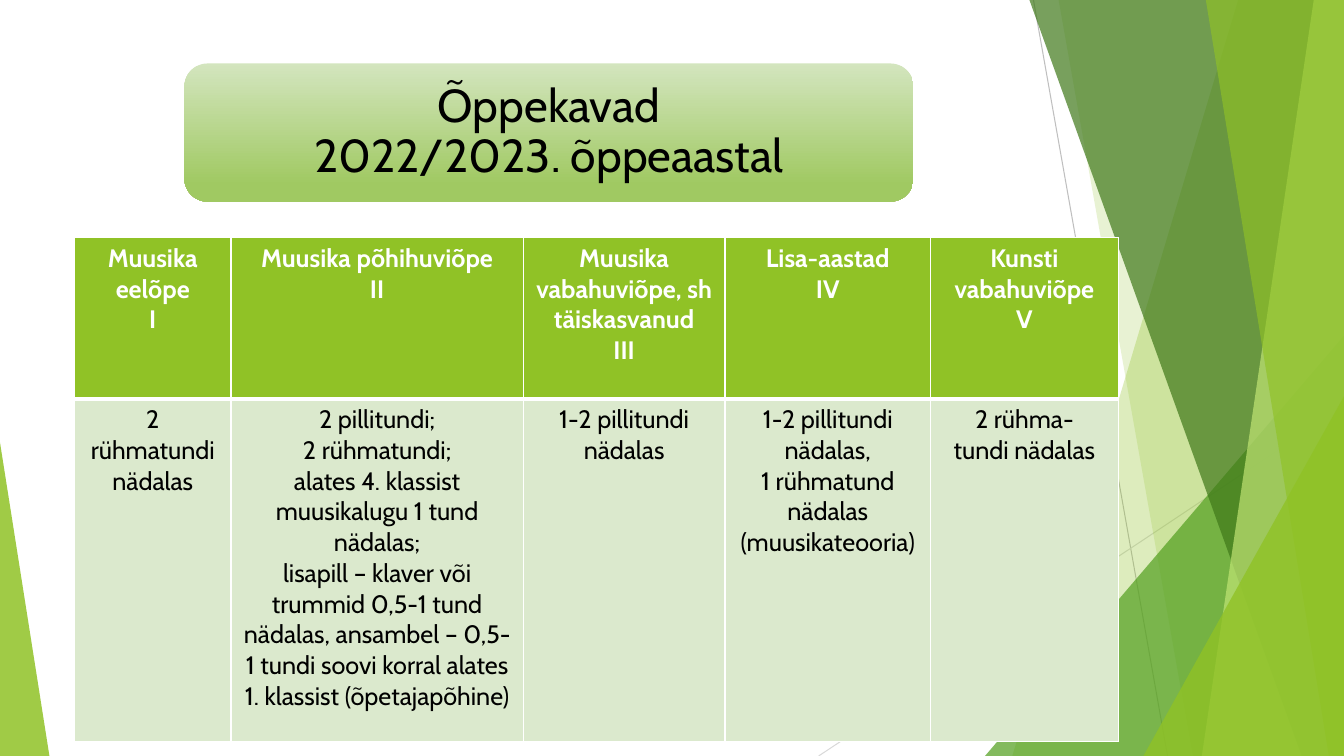
from lxml import etree
from pptx import Presentation
from pptx.dml.color import RGBColor
from pptx.enum.shapes import MSO_CONNECTOR, MSO_SHAPE
from pptx.enum.text import MSO_ANCHOR, PP_ALIGN
from pptx.oxml import parse_xml
from pptx.oxml.ns import qn
from pptx.util import Inches, Pt

STRAIGHT = MSO_CONNECTOR.STRAIGHT
TRIANGLE = MSO_SHAPE.ISOSCELES_TRIANGLE
ROUNDED = MSO_SHAPE.ROUNDED_RECTANGLE
CENTER = PP_ALIGN.CENTER
MIDDLE = MSO_ANCHOR.MIDDLE
NS = "http://schemas.openxmlformats.org/drawingml/2006/main"

FONT = "Cabin"
WHITE = RGBColor(0xFF, 0xFF, 0xFF)
BLACK = RGBColor(0, 0, 0)
GREEN = RGBColor(0x90, 0xC2, 0x26)
MID_GREEN = RGBColor(0x54, 0xA0, 0x21)
DARK_GREEN = RGBColor(0x3F, 0x78, 0x19)
LIME = RGBColor(0xC0, 0xE4, 0x74)
PALE_GREEN = RGBColor(0xDB, 0xE9, 0xCD)
TITLE_TOP = RGBColor(0xD3, 0xE5, 0xBE)
TITLE_BOTTOM = RGBColor(0xA0, 0xC9, 0x62)
GRAY = RGBColor(0xBF, 0xBF, 0xBF)
LIGHT_GRAY = RGBColor(0xD9, 0xD9, 0xD9)

WIDTH, HEIGHT = 13.33, 7.5

# Ends of each thin line, then its colour
LINES = [
    ((10.25, 0), (11.58, HEIGHT), GRAY),
    ((WIDTH, 4.03), (8.12, HEIGHT), LIGHT_GRAY),
]
# Bands reach the right edge: top left x, bottom left x, colour, opacity
BACK_BANDS = [(12.28, 10.04, GREEN, 30), (10.5, 11.83, GREEN, 20)]
FRONT_BANDS = [
    (10.21, 12.91, DARK_GREEN, 70),
    (13.03, 11.92, LIME, 70),
    (11.96, 13.18, GREEN, 65),
]

COLUMN_WIDTHS = [1.55, 2.9, 2, 2.04, 1.86]
ROW_HEIGHTS = [1.6, 3.4]
HEADERS = [
    ["Muusika", "eelõpe", "I"],
    ["Muusika põhihuviõpe", "II"],
    ["Muusika vabahuviõpe, sh täiskasvanud", "III"],
    ["Lisa-aastad", "IV"],
    ["Kunsti vabahuviõpe", "V"],
]
LESSONS = [
    ["2 rühmatundi nädalas"],
    [
        "2 pillitundi;",
        "2 rühmatundi;",
        "alates 4. klassist muusikalugu 1 tund nädalas;",
        "lisapill – klaver või trummid 0,5-1 tund nädalas, ansambel – 0,5-1 tundi "
        "soovi korral alates 1. klassist (õpetajapõhine)",
    ],
    ["1-2 pillitundi nädalas"],
    ["1-2 pillitundi nädalas,", "1 rühmatund nädalas", "(muusikateooria)"],
    ["2 rühma-", "tundi nädalas"],
]


def write(tf, paragraphs, size=18, color=BLACK, bold=False, spacing=None):
    for i, text in enumerate(paragraphs):
        p = tf.paragraphs[0] if i == 0 else tf.add_paragraph()
        p.text = text
        p.alignment = CENTER
        p.line_spacing = spacing
        for r in p.runs:
            r.font.name = FONT
            r.font.size = Pt(size)
            r.font.bold = bold
            r.font.color.rgb = color


def paint(s, color, opacity):
    s.shadow.inherit = False
    s.line.fill.background()
    s.fill.solid()
    s.fill.fore_color.rgb = color
    srgb = s.fill._xPr.find(".//" + qn("a:srgbClr"))
    etree.SubElement(srgb, qn("a:alpha"), val=str(opacity * 1000))


def add_line(shapes, start, end, color):
    s = shapes.add_connector(STRAIGHT, *map(Inches, start + end))
    s.line.color.rgb = color
    s.line.width = Pt(0.75)
    etree.SubElement(s._element.spPr, qn("a:effectLst"))


def add_band(shapes, top_x, bottom_x, color, opacity):
    points = [(WIDTH, 0), (WIDTH, HEIGHT), (bottom_x, HEIGHT)]
    builder = shapes.build_freeform(Inches(top_x), 0)
    builder.add_line_segments([(Inches(x), Inches(y)) for x, y in points])
    paint(builder.convert_to_shape(), color, opacity)


def add_triangle(shapes, left, top, width, apex, color, opacity):
    s = shapes.add_shape(TRIANGLE, Inches(left), Inches(top),
                         Inches(width), Inches(HEIGHT - top))
    s.adjustments[0] = apex
    paint(s, color, opacity)


def add_title(shapes, text):
    s = shapes.add_shape(ROUNDED, Inches(1.83), Inches(0.63), Inches(7.23), Inches(1.37))
    s.shadow.inherit = False
    s.line.fill.background()
    s.fill.gradient()
    s.fill.gradient_angle = 270
    stops = zip(s.fill.gradient_stops, [(0, TITLE_TOP), (0.88, TITLE_BOTTOM)])
    for stop, (position, color) in stops:
        stop.position = position
        stop.color.rgb = color

    box = shapes.add_textbox(Inches(1.9), Inches(0.7), Inches(7.09), Inches(1.23))
    tf = box.text_frame
    tf.word_wrap = True
    tf.vertical_anchor = MIDDLE
    tf.margin_left = tf.margin_right = tf.margin_top = tf.margin_bottom = Inches(0.14)
    write(tf, [text], size=33, spacing=0.9)


def set_borders(cell, **widths):
    tc_pr = cell._tc.get_or_add_tcPr()
    for i, side in enumerate("LRTB"):
        width = Pt(widths.get(side, 1))
        tc_pr.insert(i, parse_xml(
            f'<a:ln{side} xmlns:a="{NS}" w="{width}"><a:solidFill>'
            f'<a:srgbClr val="{WHITE}"/></a:solidFill></a:ln{side}>'))


def add_plan_table(shapes):
    table = shapes.add_table(2, len(HEADERS), Inches(0.74), Inches(2.36),
                             Inches(sum(COLUMN_WIDTHS)), Inches(sum(ROW_HEIGHTS))).table
    for column, width in zip(table.columns, COLUMN_WIDTHS):
        column.width = Inches(width)
    rows = [
        (HEADERS, GREEN, {"color": WHITE, "bold": True}, {"B": 3}),
        (LESSONS, PALE_GREEN, {}, {"T": 3}),
    ]
    for row, height, (texts, fill, style, borders) in zip(table.rows, ROW_HEIGHTS, rows):
        row.height = Inches(height)
        for cell, paragraphs in zip(row.cells, texts):
            cell.fill.solid()
            cell.fill.fore_color.rgb = fill
            set_borders(cell, **borders)
            write(cell.text_frame, paragraphs, **style)


def main():
    prs = Presentation()
    prs.slide_width, prs.slide_height = Inches(WIDTH), Inches(HEIGHT)
    shapes = prs.slides.add_slide(prs.slide_layouts[6]).shapes

    # Green background facets
    for line in LINES:
        add_line(shapes, *line)
    for band in BACK_BANDS:
        add_band(shapes, *band)
    add_triangle(shapes, 9.77, 3.33, 3.56, 1, MID_GREEN, 72)
    for band in FRONT_BANDS:
        add_band(shapes, *band)
    add_triangle(shapes, 11.34, 3.93, 1.99, 1, GREEN, 80)
    add_triangle(shapes, 0, 4.39, 0.49, 0, GREEN, 85)

    # Title and table of study plans
    add_title(shapes, "Õppekavad\v2022/2023. õppeaastal")
    add_plan_table(shapes)

    prs.save("out.pptx")


if __name__ == "__main__":
    main()
